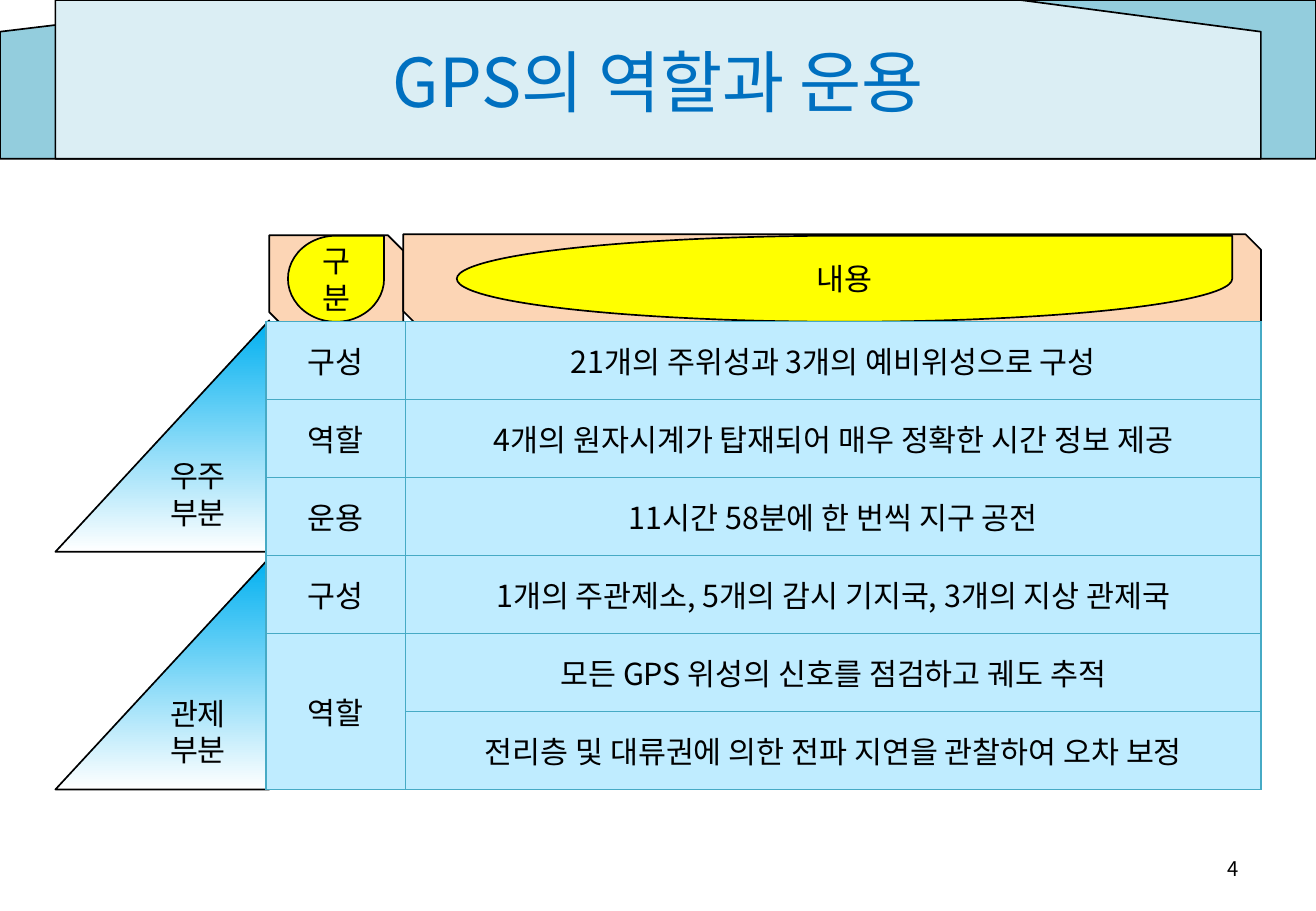
from lxml import etree
from pptx import Presentation
from pptx.dml.color import RGBColor
from pptx.enum import shapes, text
from pptx.oxml import ns
from pptx.util import Cm, Pt

FONT = "Noto Sans CJK KR"
BLACK = RGBColor(0x00, 0x00, 0x00)
WHITE = RGBColor(0xFF, 0xFF, 0xFF)
TITLE_BLUE = RGBColor(0x00, 0x70, 0xC0)
BAND_BLUE = RGBColor(0x93, 0xCD, 0xDD)
BAND_PALE = RGBColor(0xDB, 0xEE, 0xF4)
PEACH = RGBColor(0xFC, 0xD5, 0xB5)
YELLOW = RGBColor(0xFF, 0xFF, 0x00)
SKY = RGBColor(0x00, 0xB0, 0xF0)
CELL_BLUE = RGBColor(0xBF, 0xEC, 0xFF)
BORDER = RGBColor(0x46, 0xAA, 0xC5)

SHAPE = shapes.MSO_SHAPE
ALIGN = text.PP_ALIGN
MIDDLE = text.MSO_ANCHOR.MIDDLE

prs = Presentation()
prs.slide_width, prs.slide_height = Cm(27.51), Cm(19.05)
slide = prs.slides.add_slide(prs.slide_layouts[6])


def write(frame, words, size=18, color=BLACK, align=ALIGN.CENTER):
    """Put one run of Korean text into a text frame."""
    frame.word_wrap = True
    paragraph = frame.paragraphs[0]
    paragraph.alignment = align
    run = paragraph.add_run()
    run.text = words
    run.font.size = Pt(size)
    run.font.name = FONT
    run.font.color.rgb = color
    east_asian = etree.SubElement(run.font._element, ns.qn("a:ea"))
    east_asian.set("typeface", FONT)


def add_outlined(kind, left, top, width, height, color=None, flip=False):
    """Add a black-outlined shape; without a colour it fades from sky to white."""
    shape = slide.shapes.add_shape(kind, Cm(left), Cm(top), Cm(width), Cm(height))
    shape.shadow.inherit = False
    shape.line.color.rgb = BLACK
    shape.line.width = Pt(1)
    if color is None:
        shape.fill.gradient()
        shape.fill.gradient_angle = 270
        for stop, shade in zip(shape.fill.gradient_stops, (SKY, WHITE)):
            stop.color.rgb = shade
    else:
        shape.fill.solid()
        shape.fill.fore_color.rgb = color
    if flip:
        shape._element.spPr.xfrm.set("flipH", "1")
    shape.text_frame.vertical_anchor = MIDDLE
    return shape


# Title band
add_outlined(SHAPE.FLOWCHART_CARD, 0, 0, 27.51, 3.32, BAND_BLUE)
add_outlined(SHAPE.FLOWCHART_CARD, 1.16, 0, 25.2, 3.32, BAND_PALE, flip=True)

# Title and page number
for words, box, size, color, align in (
    ("GPS의 역할과 운용", (1.38, 0.1, 24.76, 3.18), 40, TITLE_BLUE, ALIGN.CENTER),
    ("4", (19.71, 17.65, 6.43, 1.02), 12, BLACK, ALIGN.RIGHT),
):
    label = slide.shapes.add_textbox(*map(Cm, box)).text_frame
    label.vertical_anchor = MIDDLE
    write(label, words, size, color, align)

# Column headings
for words, plate, drop in (
    ("구분", (5.63, 4.92, 2.8, 1.93), (6.02, 4.93, 2.01, 1.8)),
    ("내용", (8.43, 4.9, 17.93, 1.93), (9.55, 4.93, 16.21, 1.8)),
):
    add_outlined(SHAPE.SNIP_2_DIAG_RECTANGLE, *plate, PEACH)
    write(add_outlined(SHAPE.TEAR, *drop, YELLOW).text_frame, words)

# Row groups
for words, top in (("우주부분", 6.7), ("관제부분", 11.67)):
    segment = add_outlined(SHAPE.RIGHT_TRIANGLE, 1.16, top, 4.47, 4.84, flip=True)
    write(segment.text_frame, words)

# Table
ROWS = (
    ("구성", "21개의 주위성과 3개의 예비위성으로 구성"),
    ("역할", "4개의 원자시계가 탑재되어 매우 정확한 시간 정보 제공"),
    ("운용", "11시간 58분에 한 번씩 지구 공전"),
    ("구성", "1개의 주관제소, 5개의 감시 기지국, 3개의 지상 관제국"),
    ("역할", "모든 GPS 위성의 신호를 점검하고 궤도 추적"),
    ("", "전리층 및 대류권에 의한 전파 지연을 관찰하여 오차 보정"),
)
roles = slide.shapes.add_table(
    len(ROWS), 2, Cm(5.56), Cm(6.72), Cm(20.8), Cm(9.78)
).table
roles.first_row = roles.horz_banding = False
roles.columns[0].width, roles.columns[1].width = Cm(2.92), Cm(17.88)
for r, row in enumerate(ROWS):
    roles.rows[r].height = Cm(1.63)
    for c, words in enumerate(row):
        cell = roles.cell(r, c)
        cell.vertical_anchor = MIDDLE
        cell.fill.solid()
        cell.fill.fore_color.rgb = CELL_BLUE
        if words:
            write(cell.text_frame, words)
        properties = cell._tc.get_or_add_tcPr()
        for i, side in enumerate(("lnL", "lnR", "lnT", "lnB")):
            edge = etree.Element(ns.qn(f"a:{side}"), w=str(Pt(0.75)))
            paint = etree.SubElement(edge, ns.qn("a:solidFill"))
            etree.SubElement(paint, ns.qn("a:srgbClr"), val=str(BORDER))
            properties.insert(i, edge)
roles.cell(4, 0).merge(roles.cell(5, 0))

prs.save("out.pptx")
